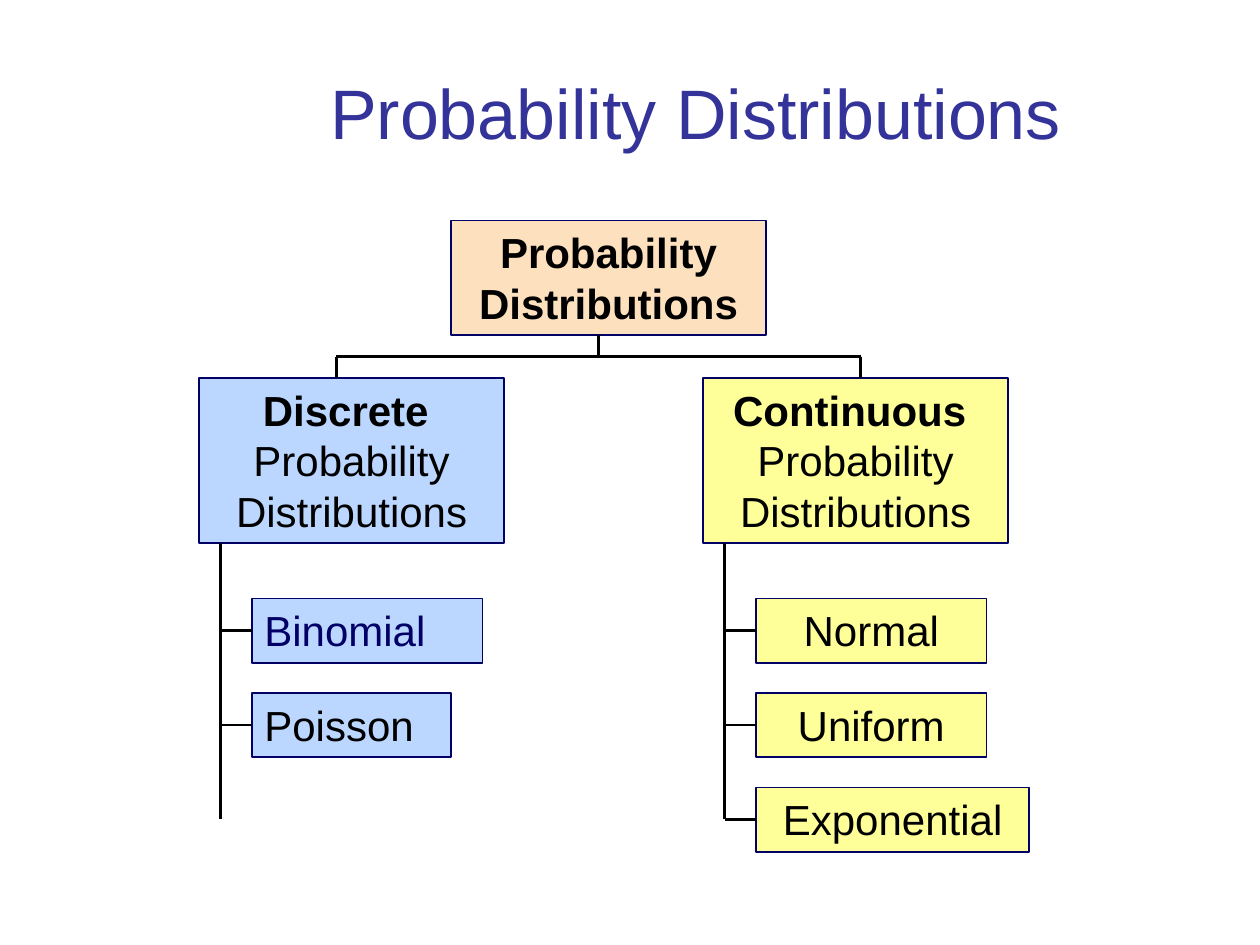
"""Build a slide with a tree of discrete and continuous probability distributions."""
from dataclasses import dataclass

import pptx
import pptx.dml.color
import pptx.enum.shapes
import pptx.enum.text
import pptx.oxml
import pptx.util
from pptx.util import Inches


@dataclass(frozen=True)
class Theme:
    font: str = "Arial"
    title_size: int = 40
    body_size: int = 24
    title: str = "333399"
    text: str = "000000"
    navy: str = "000066"
    peach: str = "FDE0BD"
    blue: str = "BBD7FF"
    yellow: str = "FFFF99"
    box_line: float = 1
    connector_line: float = 1.5


theme = Theme()
rgb = pptx.dml.color.RGBColor.from_string
align = pptx.enum.text.PP_ALIGN

presentation = pptx.Presentation()
presentation.slide_width = Inches(10)
presentation.slide_height = Inches(7.5)
slide = presentation.slides.add_slide(presentation.slide_layouts[5])


def add_box(left, top, width, height, fill, lines, alignment=align.CENTER, color=theme.text):
    shape = slide.shapes.add_shape(
        pptx.enum.shapes.MSO_SHAPE.RECTANGLE,
        Inches(left), Inches(top), Inches(width), Inches(height))
    shape.shadow.inherit = False
    shape.fill.solid()
    shape.fill.fore_color.rgb = rgb(fill)
    shape.line.color.rgb = rgb(theme.navy)
    shape.line.width = pptx.util.Pt(theme.box_line)
    frame = shape.text_frame
    frame.word_wrap = True
    frame.vertical_anchor = pptx.enum.text.MSO_ANCHOR.TOP
    for index, (text, bold) in enumerate(lines):
        paragraph = frame.add_paragraph() if index else frame.paragraphs[0]
        paragraph.text = text
        paragraph.alignment = alignment
        paragraph.font.name = theme.font
        paragraph.font.size = pptx.util.Pt(theme.body_size)
        paragraph.font.bold = bold
        paragraph.font.color.rgb = rgb(color)
    return shape


def add_line(x1, y1, x2, y2):
    connector = slide.shapes.add_connector(
        pptx.enum.shapes.MSO_CONNECTOR.STRAIGHT,
        Inches(x1), Inches(y1), Inches(x2), Inches(y2))
    connector.line.color.rgb = rgb(theme.text)
    connector.line.width = pptx.util.Pt(theme.connector_line)
    connector._element.spPr.append(pptx.oxml.parse_xml(
        '<a:effectLst xmlns:a="http://schemas.openxmlformats.org/drawingml/2006/main"/>'))
    return connector


title = slide.shapes.title
title.left, title.top, title.width, title.height = map(Inches, (1.67, 0.5, 7.7, 0.76))
title.text_frame.vertical_anchor = pptx.enum.text.MSO_ANCHOR.TOP
paragraph = title.text_frame.paragraphs[0]
paragraph.text = "Probability Distributions"
paragraph.alignment = align.CENTER
paragraph.font.name = theme.font
paragraph.font.size = pptx.util.Pt(theme.title_size)
paragraph.font.color.rgb = rgb(theme.title)

add_box(3.58, 1.75, 2.5, 0.91, theme.peach, [("Probability Distributions", True)])

rail_y = 2.83
add_line(4.75, 2.66, 4.75, rail_y)
add_line(2.67, rail_y, 6.83, rail_y)

branches = [
    ("Discrete ", 1.58, 2.67, theme.blue, align.LEFT,
     [("Binomial", 1.83, theme.navy), ("Poisson", 1.58, theme.text)]),
    ("Continuous ", 5.58, 6.83, theme.yellow, align.CENTER,
     [("Normal", 1.83, theme.text), ("Uniform", 1.83, theme.text),
      ("Exponential", 2.17, theme.text)]),
]
branch_top, branch_height = 3, 1.31
leaf_top, leaf_height, leaf_step = 4.75, 0.51, 0.75

for name, left, drop_x, fill, alignment, leaves in branches:
    add_box(left, branch_top, 2.42, branch_height, fill,
            [(name, True), ("Probability Distributions", False)])
    add_line(drop_x, rail_y, drop_x, branch_top)
    trunk_x = left + 0.17
    add_line(trunk_x, branch_top + branch_height, trunk_x, 6.5)
    for index, (leaf, width, color) in enumerate(leaves):
        top = leaf_top + index * leaf_step
        middle = top + leaf_height / 2
        box = add_box(left + 0.42, top, width, leaf_height, fill,
                      [(leaf, False)], alignment, color)
        add_line(trunk_x, middle, left + 0.42, middle).end_connect(box, 1)

presentation.save("out.pptx")
